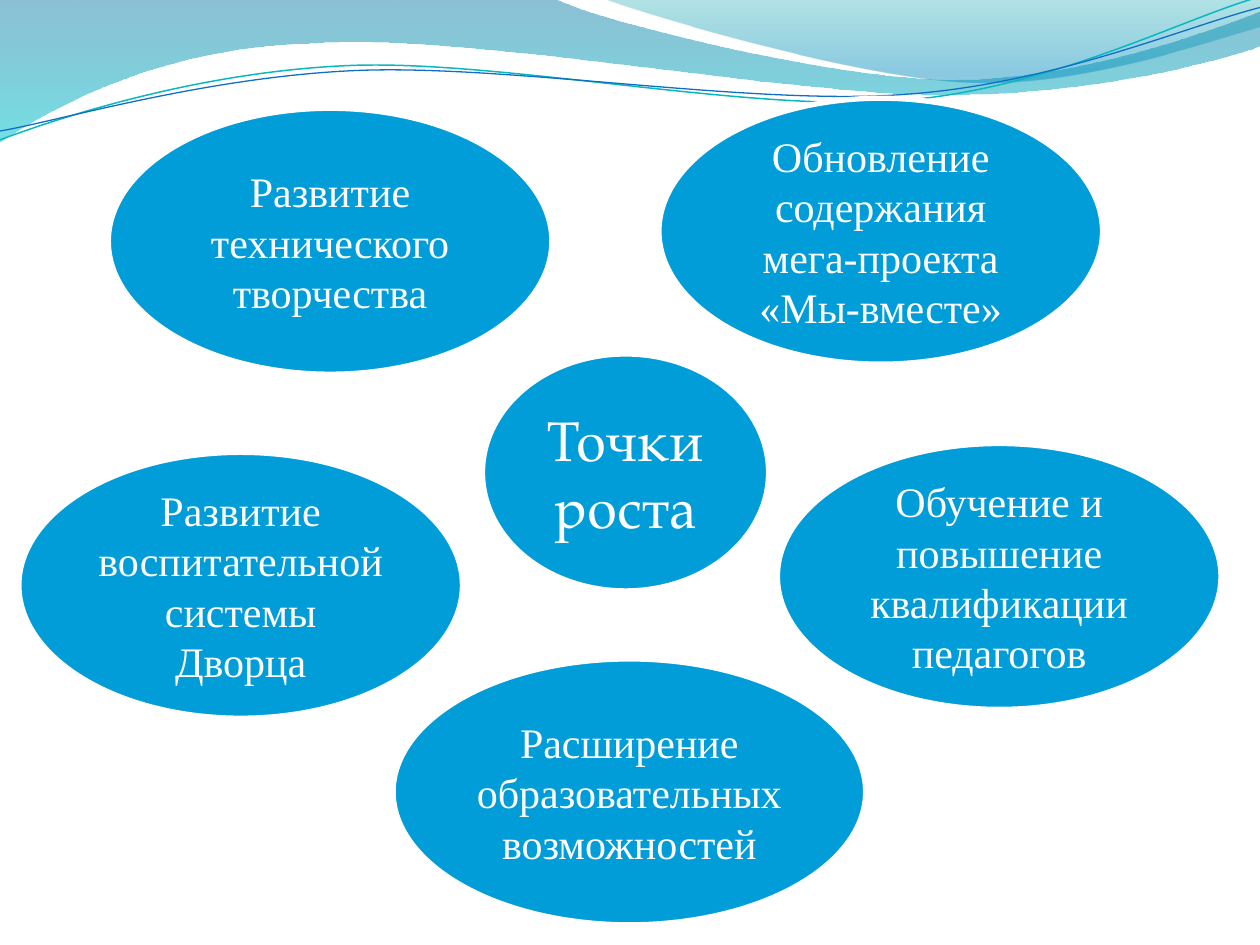
from math import cos, radians, sin

from lxml.etree import SubElement
from pptx import Presentation
from pptx.dml.color import RGBColor
from pptx.enum.shapes import MSO_SHAPE
from pptx.enum.text import MSO_ANCHOR, PP_ALIGN
from pptx.oxml.ns import qn
from pptx.util import Inches, Pt

COLUMNS, ROWS = 10, 7.5
LINE_TILT = 2.7

# Waves: a start point, then line ends (2 numbers) or Bezier curves (6 numbers)
FILLED_WAVES = [
    ([(0, 0), (4.4, -0.01), (4.76, 0.17, 6.64, 0.63, 7.58, 0.63),
      (8.53, 0.63, 9.58, 0.26, 10, 0.09), (10.01, 0.36),
      (9.83, 0.44, 8.7, 0.76, 7.46, 0.75), (6.22, 0.75, 3.82, 0.28, 2.57, 0.34),
      (1.29, 0.36, 0.46, 0.83, -0.01, 1.13)],
     [(0, "0074A1", 45), (1, "00C6CF", 55)]),
    ([(4.79, -0.01), (5.09, 0.11, 6.82, 0.62, 7.69, 0.65),
      (8.56, 0.69, 9.61, 0.32, 10, 0.21), (10, 0)],
     [(0, "00A1A9", 30), (0.8, "008BBF", 45)]),
]
# Thin waves also have the centre they are tilted about
LINE_WAVES = [
    ([(0, 1.11), (0.48, 0.93, 1.58, 0.57, 2.77, 0.52),
      (3.95, 0.47, 5.93, 0.89, 7.13, 0.8), (8.33, 0.71, 9.38, 0.15, 9.98, -0.02)],
     (4.99, 0.57), "0AB8BF", 0.85),
    ([(0, 1.04), (0.47, 0.96, 1.64, 0.61, 2.83, 0.56),
      (4.03, 0.51, 5.97, 0.84, 7.17, 0.75), (8.36, 0.67, 9.41, 0.21, 10, 0.06)],
     (5, 0.59), "0F6FC6", 0.75),
]

# Ellipses: text, left column, top row, width in columns
TOPICS = [
    ("Обновление содержания мега-проекта «Мы-вместе»", 5.25, 0.8, 3.48),
    ("Развитие технического творчества", 0.88, 0.88, 3.48),
    ("Развитие воспитательной системы Дворца", 0.17, 3.61, 3.48),
    ("Обучение и повышение квалификации педагогов", 6.19, 3.54, 3.48),
    ("Расширение образовательных возможностей", 3.14, 5.25, 3.71),
]
TOPICS = [(text, left - 0.02, top - 0.02, width + 0.04)
          for text, left, top, width in TOPICS]


def color(hex_string):
    return RGBColor.from_string(hex_string)


def level(segment, center):
    """Turn the points of a segment clockwise to undo the tilt of its shape."""
    cosine, sine = cos(radians(LINE_TILT)), sin(radians(LINE_TILT))
    turned = []
    for x, y in zip(segment[::2], segment[1::2]):
        dx, dy = x - center[0], y - center[1]
        turned += [center[0] + dx * cosine - dy * sine,
                   center[1] + dx * sine + dy * cosine]
    return turned


def add_outline(slide, box, segments, close):
    left, top, width, height = box
    points = [(left + x * width / COLUMNS, top + y * height / ROWS)
              for segment in segments
              for x, y in zip(segment[::2], segment[1::2])]
    builder = slide.shapes.build_freeform(*points[0], scale=1.0)
    builder.add_line_segments(points[1:], close=close)
    shape = builder.convert_to_shape()
    shape.shadow.inherit = False
    # Join each three points of a curve into one Bezier element
    corners = iter(list(shape.element.iter(qn("a:lnTo"))))
    for segment in segments[1:]:
        corner = next(corners)
        if len(segment) == 6:
            curve = corner.makeelement(qn("a:cubicBezTo"))
            corner.addprevious(curve)
            for part in (corner, next(corners), next(corners)):
                curve.append(part[0])
                part.getparent().remove(part)
    return shape


def add_waves(slide, box):
    # Translucent gradient areas
    for segments, stops in FILLED_WAVES:
        shape = add_outline(slide, box, segments, close=True)
        shape.line.fill.background()
        shape.fill.gradient()
        shape.fill.gradient_angle = 270
        for stop, (position, hex_string, _) in zip(shape.fill.gradient_stops, stops):
            stop.position = position
            stop.color.rgb = color(hex_string)
        for element, (_, _, opacity) in zip(shape.element.iter(qn("a:srgbClr")), stops):
            SubElement(element, qn("a:alpha"), val=str(opacity * 1000))
    # Thin tilted lines
    for segments, center, hex_string, weight in LINE_WAVES:
        leveled = [level(segment, center) for segment in segments]
        shape = add_outline(slide, box, leveled, close=False)
        shape.rotation = 360 - LINE_TILT
        shape.fill.background()
        shape.line.color.rgb = color(hex_string)
        shape.line.width = Pt(weight)


def add_ellipse(slide, box, text, corner, size, font_name, font_size):
    left, top, box_width, box_height = box
    column, row = box_width / COLUMNS, box_height / ROWS
    shape = slide.shapes.add_shape(
        MSO_SHAPE.OVAL,
        int(left + corner[0] * column), int(top + corner[1] * row),
        int(size[0] * column), int(size[1] * row))
    shape.shadow.inherit = False
    shape.fill.solid()
    shape.fill.fore_color.rgb = color("009DD9")
    shape.line.color.rgb = color("FFFFFF")
    shape.line.width = Pt(3)
    text_frame = shape.text_frame
    text_frame.text = text
    text_frame.word_wrap = True
    text_frame.vertical_anchor = MSO_ANCHOR.MIDDLE
    paragraph = text_frame.paragraphs[0]
    paragraph.alignment = PP_ALIGN.CENTER
    font = paragraph.runs[0].font
    font.name, font.size = font_name, Pt(font_size)
    font.color.rgb = color("FFFFFF")


def add_growth_points(slide, box):
    # Central idea
    add_ellipse(slide, box, "Точки роста", (3.83, 2.81), (2.27, 1.88),
                "TeX Gyre Pagella", 32)
    # Topics around it
    for text, left, top, width in TOPICS:
        add_ellipse(slide, box, text, (left, top), (width, 2.11),
                    "Times New Roman", 24)


def main():
    presentation = Presentation()
    presentation.slide_width = Inches(COLUMNS)
    presentation.slide_height = Inches(ROWS)
    slide = presentation.slides.add_slide(presentation.slide_layouts[6])
    box = (0, 0, presentation.slide_width, presentation.slide_height)
    add_waves(slide, box)
    add_growth_points(slide, box)
    presentation.save("out.pptx")


if __name__ == "__main__":
    main()
